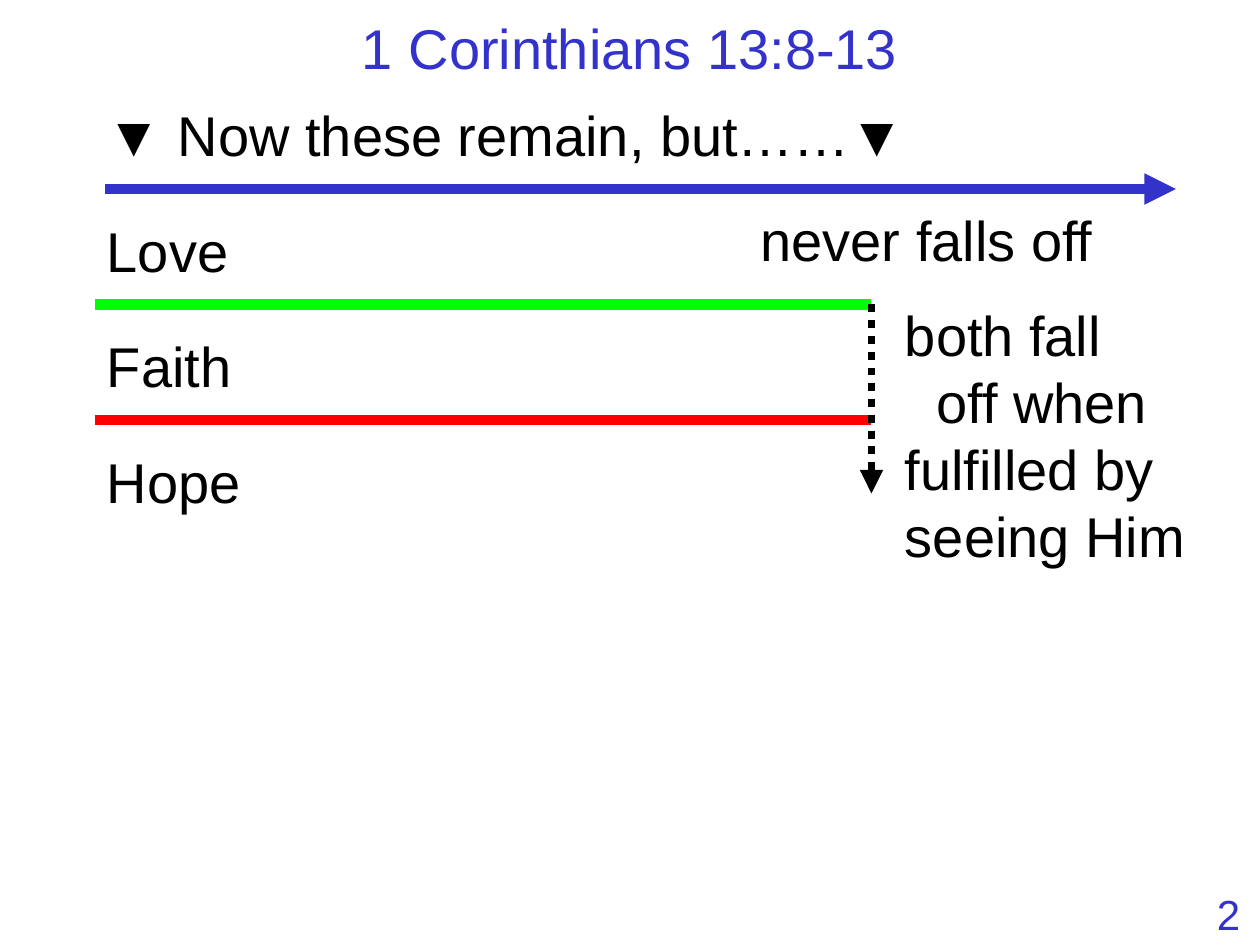
from lxml import etree
from pptx import Presentation
from pptx.dml.color import RGBColor
from pptx.enum import dml, shapes, text
from pptx.oxml.ns import qn
from pptx.util import Pt

PX = 9525
COLORS = {"blue": "3333CC", "green": "00FF00", "red": "FF0000", "black": "000000"}
LEFT, CENTER = text.PP_ALIGN.LEFT, text.PP_ALIGN.CENTER
TOP, MIDDLE = text.MSO_ANCHOR.TOP, text.MSO_ANCHOR.MIDDLE

presentation = Presentation()
presentation.slide_width = 960 * PX
presentation.slide_height = 720 * PX
slide = presentation.slides.add_slide(presentation.slide_layouts[6])


def add_line(start, end, color, width, arrow=False, dash=None):
    ends = [value * PX for value in (*start, *end)]
    line = slide.shapes.add_connector(shapes.MSO_CONNECTOR.STRAIGHT, *ends)
    line.line.color.rgb = RGBColor.from_string(COLORS[color])
    line.line.width = Pt(width)
    if dash:
        line.line.dash_style = dash
    properties = line._element.spPr
    if arrow:
        etree.SubElement(properties.find(qn("a:ln")), qn("a:tailEnd"), type="triangle")
    etree.SubElement(properties, qn("a:effectLst"))


def add_label(box, lines, color="black", size=32, align=LEFT, anchor=TOP):
    label = slide.shapes.add_textbox(*[value * PX for value in box])
    frame = label.text_frame
    frame.word_wrap = True
    frame.vertical_anchor = anchor
    font_format = {"name": "Arial", "size": Pt(size)}
    for index, (wording, indent) in enumerate(lines):
        paragraph = frame.paragraphs[0] if index == 0 else frame.add_paragraph()
        paragraph.alignment = align
        if indent:
            paragraph._p.get_or_add_pPr().set("marL", str(indent * PX))
        run = paragraph.add_run()
        run.text = wording
        for name, value in font_format.items():
            setattr(run.font, name, value)
        run.font.color.rgb = RGBColor.from_string(COLORS[color])


add_label((72, 0, 816, 72), [("1 Corinthians 13:8-13", 0)], "blue", align=CENTER, anchor=MIDDLE)

row_top, row_step = 144, 88
rows = [
    ("Love", "blue", 80, 896, True),
    ("Faith", "green", 72, 664, False),
    ("Hope", "red", 72, 664, False),
]
for index, (name, color, left, right, arrow) in enumerate(rows):
    y = row_top + index * row_step
    add_line((left, y), (right, y), color, 6, arrow)
    add_label((72, y + 16, 280, 60), [(name, 0)])

add_line((664, 232), (664, 376), "black", 4.5, True, dml.MSO_LINE.ROUND_DOT)

add_label((72, 72, 744, 60), [("▼ Now these remain, but……▼", 0)])
add_label((560, 152, 304, 60), [("never falls off ", 0)], align=CENTER)
add_label(
    (680, 224, 248, 214),
    [("both fall", 0), ("off when", 24), ("fulfilled by seeing Him", 0)],
)
add_label((912, 672, 48, 48), [("2", 0)], "blue", 24, CENTER)

presentation.save("out.pptx")
